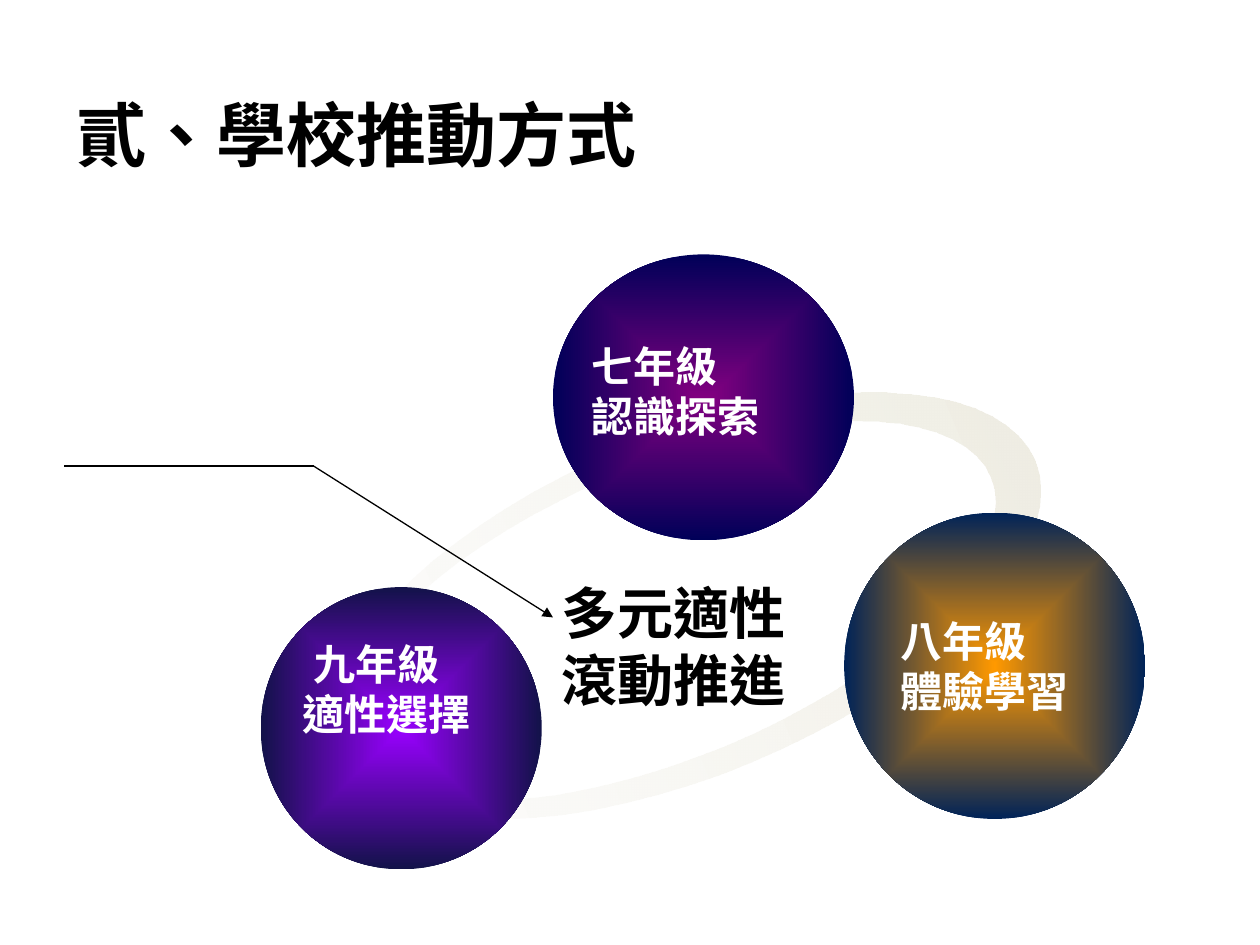
import math

import lxml.etree
import pptx
import pptx.dml.color
import pptx.enum.dml
import pptx.enum.lang
import pptx.enum.shapes
import pptx.enum.text
import pptx.oxml.ns
import pptx.util

Pt = pptx.util.Pt
RGB = pptx.dml.color.RGBColor
qn = pptx.oxml.ns.qn

BLACK = RGB(0x00, 0x00, 0x00)
WHITE = RGB(0xFF, 0xFF, 0xFF)
RING_PALE = RGB(0xFA, 0xF9, 0xF6)
RING_DEEP = RGB(0xEE, 0xEC, 0xE1)
ORANGE = RGB(0xFF, 0x99, 0x00)
DEEP_BLUE = RGB(0x00, 0x23, 0x58)
PURPLE = RGB(0x80, 0x00, 0x80)
NAVY = RGB(0x00, 0x00, 0x58)
VIOLET = RGB(0x99, 0x00, 0xFF)
MIDNIGHT = RGB(0x12, 0x12, 0x49)

LATIN = "Times New Roman"
TITLE_FONT = "Noto Sans CJK SC"
GRADE_FONT = "Noto Sans CJK TC"


def write_lines(frame, lines, size, font_name, color, first_indent=0):
    """Fill a text frame with bold left-aligned paragraphs."""
    for number, line in enumerate(lines):
        paragraph = frame.paragraphs[0] if number == 0 else frame.add_paragraph()
        paragraph.text = line
        paragraph.alignment = pptx.enum.text.PP_ALIGN.LEFT
        if number == 0 and first_indent:
            paragraph._p.get_or_add_pPr().set("marL", str(Pt(first_indent)))
        font = paragraph.font
        font.size, font.bold, font.name = Pt(size), True, font_name
        font.color.rgb = color
        font.language_id = pptx.enum.lang.MSO_LANGUAGE_ID.TRADITIONAL_CHINESE


def add_label(slide, box, lines, size, font_name, color, first_indent=0):
    """Add a wrapping text box at box (left, top, width, height)."""
    label = slide.shapes.add_textbox(*map(Pt, box))
    label.text_frame.word_wrap = True
    write_lines(label.text_frame, lines, size, font_name, color, first_indent)


def fill_gradient(shape, start, end):
    """Give a shape a plain left-to-right gradient without outline or shadow."""
    shape.shadow.inherit = False
    shape.line.fill.background()
    shape.fill.gradient()
    shape.fill.gradient_angle = 0
    for stop, position, color in zip(shape.fill.gradient_stops, (0, 1), (start, end)):
        stop.position = position
        stop.color.rgb = color
    return shape._element.spPr.find(qn("a:gradFill"))


def add_grade_circle(slide, box, center, edge):
    """Add an ellipse whose colour runs from its centre to its edge."""
    circle = slide.shapes.add_shape(pptx.enum.shapes.MSO_SHAPE.OVAL, *map(Pt, box))
    gradient = fill_gradient(circle, center, edge)
    linear = gradient.find(qn("a:lin"))
    radial = lxml.etree.Element(qn("a:path"), path="shape")
    sides = dict.fromkeys("ltrb", "50000")
    lxml.etree.SubElement(radial, qn("a:fillToRect"), sides)
    gradient.replace(linear, radial)
    return circle


def ellipse_points(center_x, center_y, radius_x, radius_y, count=72):
    """Return points around an ellipse."""
    angles = [2 * math.pi * step / count for step in range(count)]
    return [(Pt(center_x + radius_x * math.cos(a)), Pt(center_y + radius_y * math.sin(a)))
            for a in angles]


def add_ring(slide):
    """Add the tilted ring that ties the three grades together."""
    outer = ellipse_points(392, 346, 215.6, 96.8)
    inner = ellipse_points(382, 345, 198.6, 83.2)
    builder = slide.shapes.build_freeform(*outer[0])
    builder.add_line_segments(outer[1:], close=True)
    builder.move_to(*inner[0])
    builder.add_line_segments(inner[1:], close=True)
    ring = builder.convert_to_shape()
    ring.rotation = 337.4
    gradient = fill_gradient(ring, RING_PALE, RING_DEEP)
    pale = gradient.find(".//" + qn("a:srgbClr"))
    lxml.etree.SubElement(pale, qn("a:alpha"), val="36000")


def add_pointer(slide, start, end, width, arrow=False):
    """Add one straight part of the pointer."""
    pointer = slide.shapes.add_connector(
        pptx.enum.shapes.MSO_CONNECTOR.STRAIGHT, *map(Pt, start + end))
    pointer.line.color.rgb = BLACK
    pointer.line.width = Pt(width)
    if arrow:
        lxml.etree.SubElement(pointer.line._get_or_add_ln(), qn("a:tailEnd"), type="triangle")
    lxml.etree.SubElement(pointer._element.spPr, qn("a:effectLst"))


def main():
    """Build the slide and save it."""
    deck = pptx.Presentation()
    deck.slide_width, deck.slide_height = Pt(720), Pt(540)
    slide = deck.slides.add_slide(deck.slide_layouts[6])

    add_ring(slide)
    add_label(slide, (314, 327, 190, 85), ["多元適性", "滾動推進"], 32, LATIN, BLACK)

    eighth = add_grade_circle(slide, (482.4, 293, 172, 175), ORANGE, DEEP_BLUE)
    eighth.text_frame.word_wrap = False
    eighth.text_frame.vertical_anchor = pptx.enum.text.MSO_ANCHOR.MIDDLE
    write_lines(eighth.text_frame, ["八年級", "體驗學習"], 24, GRADE_FONT, WHITE)

    add_grade_circle(slide, (316, 145.4, 172, 163.4), PURPLE, NAVY)
    add_label(slide, (331, 191, 163.4, 65.5), ["七年級", "認識探索"], 24, LATIN, WHITE)

    add_grade_circle(slide, (149, 335.5, 160.6, 161.3), VIOLET, MIDNIGHT)
    add_label(slide, (166, 361.4, 115, 92), ["九年級", "適性選擇"], 24, LATIN, WHITE, 6)

    bend = (179.3, 266.4)
    add_pointer(slide, bend, (36.7, 266.4), 1.25)
    add_pointer(slide, bend, (316, 352.8), 0.75, arrow=True)

    add_label(slide, (36.7, 49, 340, 55.4), ["貳、學校推動方式"], 40, TITLE_FONT, BLACK)
    deck.save("out.pptx")


if __name__ == "__main__":
    main()
